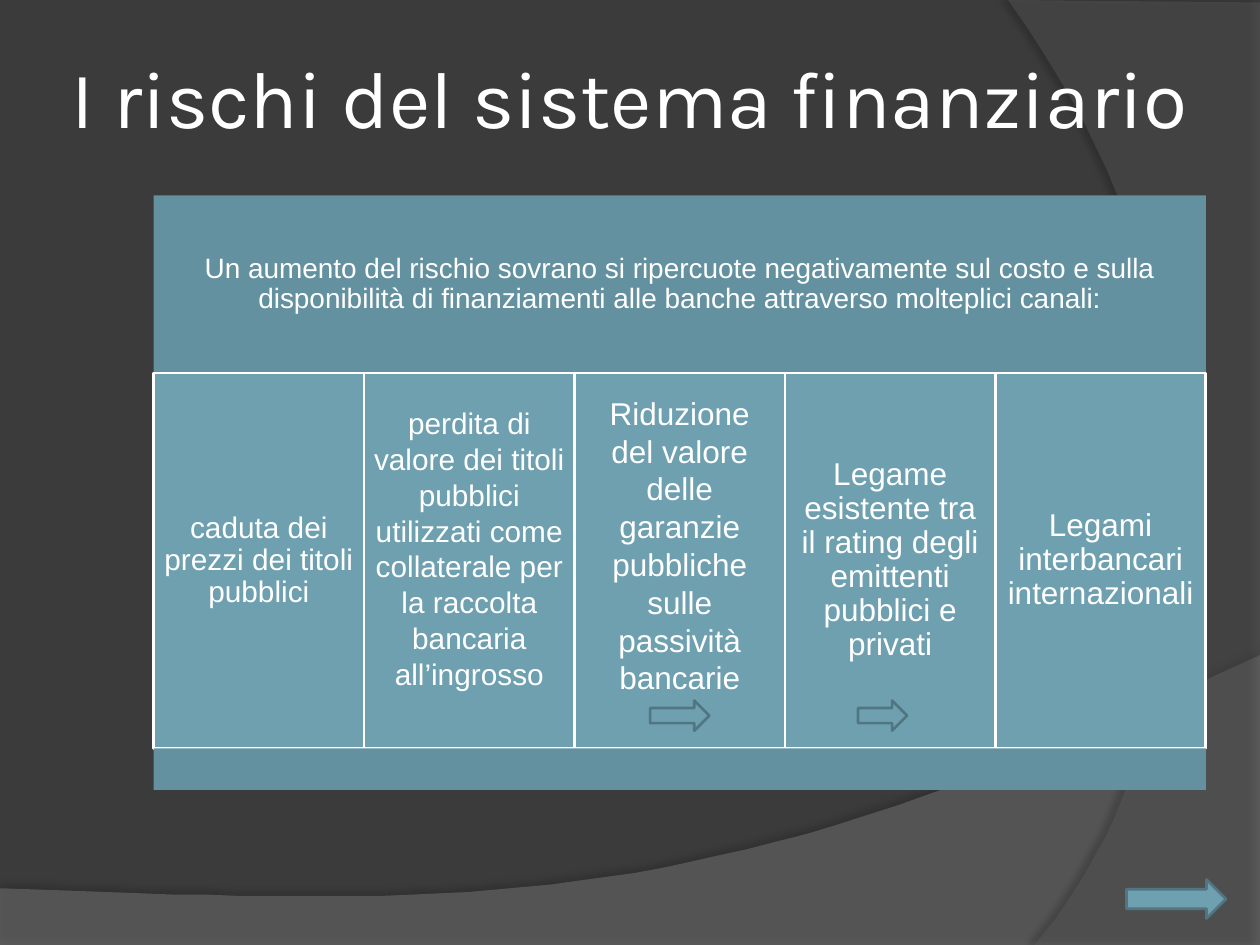
from dataclasses import dataclass

from lxml.etree import SubElement
from pptx import Presentation
from pptx.dml.color import RGBColor
from pptx.enum.shapes import MSO_SHAPE as Preset
from pptx.enum.text import MSO_ANCHOR as Anchor, PP_ALIGN as Align
from pptx.oxml.ns import qn
from pptx.util import Emu, Pt

EMU_PER_PX = 9144


@dataclass(frozen=True)
class Theme:
    background: str = "3B3B3B"
    lower_wave: str = "7F7F7F"
    right_wave: str = "5E5E5E"
    shadow: str = "000000"
    band: str = "6491A0"
    panel: str = "6EA0B0"
    arrow_edge: str = "517682"
    light: str = "FFFFFF"
    heading_font: str = "Karla"
    body_font: str = "Arial"
    title_size: int = 46
    intro_size: int = 16
    small_size: int = 17
    large_size: int = 18
    edge_width: float = 1.5


def px(length):
    return Emu(round(length * EMU_PER_PX))


def curve(start, first, second, end, steps=40):
    points = []
    for step in range(1, steps + 1):
        t = step / steps
        u = 1 - t
        weights = (u ** 3, 3 * u * u * t, 3 * u * t * t, t ** 3)
        points.append(tuple(
            sum(w * p[axis] for w, p in zip(weights, (start, first, second, end)))
            for axis in (0, 1)
        ))
    return points


class Deck:
    def __init__(self, theme, width, height):
        self.theme = theme
        self.presentation = Presentation()
        self.presentation.slide_width = px(width)
        self.presentation.slide_height = px(height)
        self.slide = self.presentation.slides.add_slide(self.presentation.slide_layouts[6])
        backdrop = self.slide.background.fill
        backdrop.solid()
        backdrop.fore_color.rgb = RGBColor.from_string(theme.background)

    def paint(self, shape, fill, edge=None):
        shape.shadow.inherit = False
        shape.fill.solid()
        shape.fill.fore_color.rgb = RGBColor.from_string(fill)
        if edge:
            shape.line.color.rgb = RGBColor.from_string(edge)
            shape.line.width = Pt(self.theme.edge_width)
        else:
            shape.line.fill.background()

    def set_text(self, shape, paragraphs, size, font, inset, spacing=None, extra_bottom=0):
        frame = shape.text_frame
        frame.word_wrap = True
        frame.vertical_anchor = Anchor.MIDDLE
        frame.margin_left = frame.margin_right = frame.margin_top = px(inset)
        frame.margin_bottom = px(inset + extra_bottom)
        frame.text = "\n".join(paragraphs)
        for paragraph in frame.paragraphs:
            paragraph.alignment = Align.CENTER
            if spacing:
                paragraph.line_spacing = spacing
            for run in paragraph.runs:
                run.font.size = Pt(size)
                run.font.name = font
                run.font.color.rgb = RGBColor.from_string(self.theme.light)

    def wave(self, points, color, opacity, shadow_opacity, blur, distance, direction):
        builder = self.slide.shapes.build_freeform(*points[0], scale=EMU_PER_PX)
        builder.add_line_segments(points[1:], close=True)
        shape = builder.convert_to_shape()
        self.paint(shape, color)
        properties = shape.element.spPr
        tint = properties.find(qn("a:solidFill")).find(qn("a:srgbClr"))
        SubElement(tint, qn("a:alpha"), val=str(opacity * 1000))
        shadow = SubElement(
            properties.find(qn("a:effectLst")), qn("a:outerShdw"),
            blurRad=str(int(Pt(blur))), dist=str(int(Pt(distance))),
            dir=str(direction * 60000), rotWithShape="0",
        )
        shade = SubElement(shadow, qn("a:srgbClr"), val=self.theme.shadow)
        SubElement(shade, qn("a:alpha"), val=str(shadow_opacity * 1000))

    def title(self, text, left, top, width, height):
        box = self.slide.shapes.add_textbox(px(left), px(top), px(width), px(height))
        self.set_text(box, [text], self.theme.title_size, self.theme.heading_font, 5)

    def block(self, left, top, width, height, fill, edge=None, preset=Preset.RECTANGLE):
        shape = self.slide.shapes.add_shape(preset, px(left), px(top), px(width), px(height))
        self.paint(shape, fill, edge)
        return shape

    def panel(self, bounds, fill, paragraphs, size, edge=None, spacing=0.9, extra_bottom=0):
        shape = self.block(*bounds, fill, edge)
        self.set_text(shape, paragraphs, size, self.theme.body_font, 7, spacing, extra_bottom)

    def arrow(self, left, top, width, height):
        self.block(left, top, width, height, self.theme.panel, self.theme.arrow_edge,
                   Preset.RIGHT_ARROW)

    def save(self):
        self.presentation.save("out.pptx")


def main():
    theme = Theme()
    deck = Deck(theme, 1000, 750)

    lower_edge = curve((1000, 520), (559, 729), (391, 719), (0, 705))
    deck.wave([(0, 705), (0, 750), (1000, 750), (1000, 520)] + lower_edge[:-1],
              theme.lower_wave, 45, 35, 4, 3.5, 270)
    right_edge = curve((821, 750), (935, 619), (1018, 300), (800, 0))
    deck.wave([(1000, 2), (1000, 750), (821, 750)] + right_edge,
              theme.right_wave, 40, 45, 4, 4, 180)

    deck.title("I rischi del sistema finanziario", 50, 30, 899, 93)

    left, column_width, columns_top, columns_height = 122, 167, 296, 298
    channels = [
        (["caduta dei prezzi dei titoli pubblici"], theme.small_size, 0.9, 0),
        (["perdita di valore dei titoli pubblici utilizzati come collaterale "
          "per la raccolta bancaria all’ingrosso"], theme.small_size, None, 20),
        (["Riduzione", "del valore delle garanzie pubbliche sulle passività bancarie"],
         theme.large_size, None, 25),
        (["Legame esistente tra il rating degli emittenti pubblici e privati"],
         theme.large_size, 0.9, 0),
        (["Legami interbancari internazionali"], theme.large_size, 0.9, 0),
    ]
    table_width = column_width * len(channels)
    deck.panel((left, 155, table_width, 142), theme.band,
               ["Un aumento del rischio sovrano si ripercuote negativamente sul costo "
                "e sulla disponibilità di finanziamenti alle banche attraverso "
                "molteplici canali:"], theme.intro_size)
    for index, (paragraphs, size, spacing, extra_bottom) in enumerate(channels):
        bounds = (left + index * column_width, columns_top, column_width, columns_height)
        deck.panel(bounds, theme.panel, paragraphs, size, theme.light, spacing, extra_bottom)
    deck.block(left, columns_top + columns_height, table_width, 33, theme.band)

    deck.arrow(894, 698, 79, 31)
    for arrow_left, arrow_width in ((516, 47), (681, 39)):
        deck.arrow(arrow_left, 556, arrow_width, 24)

    deck.save()


if __name__ == "__main__":
    main()
